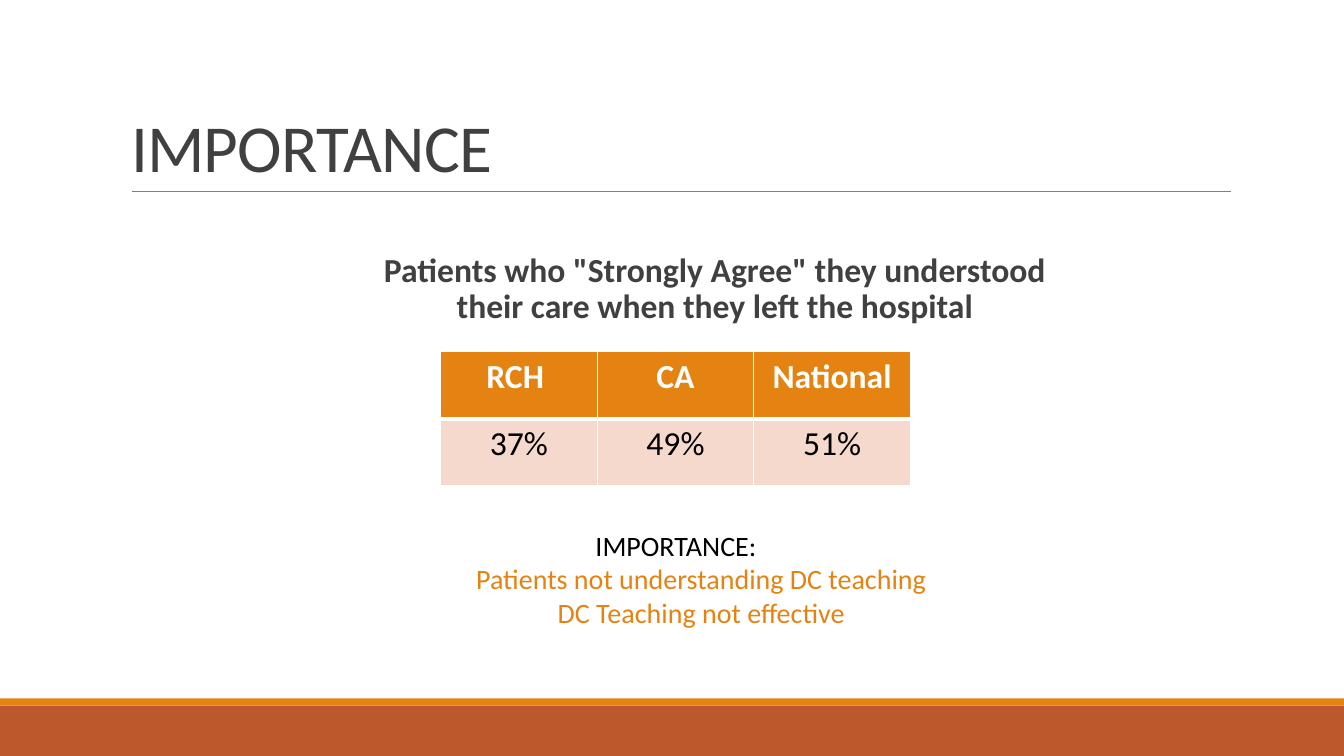
"""Build the slide on how well patients understood their care."""
from dataclasses import dataclass

from lxml import etree
from pptx import Presentation
from pptx.dml.color import RGBColor
from pptx.enum import shapes, text
from pptx.oxml import ns
from pptx.util import Inches, Pt

WHITE = RGBColor(0xFF, 0xFF, 0xFF)
BLACK = RGBColor(0, 0, 0)
DARK = RGBColor(0x40, 0x40, 0x40)
GRAY = RGBColor(0x80, 0x80, 0x80)
AMBER = RGBColor(0xE4, 0x83, 0x12)
RUST = RGBColor(0xBD, 0x58, 0x2C)
BLUSH = RGBColor(0xF5, 0xD9, 0xCC)
FONT = "Calibri"


@dataclass
class Band:
    top: float
    height: float
    fill: RGBColor


@dataclass
class Row:
    words: tuple[str, ...]
    fill: RGBColor
    ink: RGBColor
    bold: bool
    rules: dict[str, float]


@dataclass
class Note:
    words: str
    ink: RGBColor
    level: int
    indent: float


BANDS = [Band(7, 0.5, RUST), Band(6.93, 0.07, AMBER)]
ROWS = [
    Row(("RCH ", "CA", "National"), AMBER, WHITE, True,
        {"lnL": 1, "lnR": 1, "lnT": 1, "lnB": 3}),
    Row(("37%", "49%", "51%"), BLUSH, BLACK, False,
        {"lnL": 1, "lnR": 1, "lnT": 3, "lnB": 1}),
]
NOTES = [
    Note("IMPORTANCE:", BLACK, 0, 0),
    Note("Patients not understanding DC teaching", AMBER, 1, 0.5),
    Note("DC Teaching not effective", AMBER, 1, 0.5),
]


def add_run(para, words: str, size: float, ink: RGBColor, bold: bool = False):
    run = para.add_run()
    run.text = words
    run.font.name = FONT
    run.font.size = Pt(size)
    run.font.bold = bold
    run.font.color.rgb = ink
    return run


def place(shape, left: float, top: float, width: float, height: float) -> None:
    shape.left, shape.top = Inches(left), Inches(top)
    shape.width, shape.height = Inches(width), Inches(height)


def set_indent(para, left: float) -> None:
    props = para._p.get_or_add_pPr()
    props.set("marL", str(Inches(left)))
    props.set("indent", "0")


def draw_band(slide, band: Band) -> None:
    shape = slide.shapes.add_shape(
        shapes.MSO_SHAPE.RECTANGLE, 0, Inches(band.top),
        Inches(13.33), Inches(band.height))
    shape.shadow.inherit = False
    shape.fill.solid()
    shape.fill.fore_color.rgb = band.fill
    shape.line.fill.background()


def draw_rule(slide) -> None:
    rule = slide.shapes.add_connector(
        shapes.MSO_CONNECTOR.STRAIGHT,
        Inches(1.31), Inches(1.9), Inches(12.21), Inches(1.9))
    rule.line.color.rgb = GRAY
    rule.line.width = Pt(0.5)
    etree.SubElement(rule._element.spPr, ns.qn("a:effectLst"))


def fill_title(slide) -> None:
    title = slide.shapes.title
    place(title, 1.2, 0.31, 11, 1.59)
    frame = title.text_frame
    frame.auto_size = text.MSO_AUTO_SIZE.NONE
    frame.vertical_anchor = text.MSO_ANCHOR.BOTTOM
    para = frame.paragraphs[0]
    para.alignment = text.PP_ALIGN.LEFT
    para.line_spacing = 0.85
    run = add_run(para, "IMPORTANCE", 48, DARK)
    run.font._element.set("spc", "-50")


def fill_body(slide) -> None:
    body = slide.placeholders[1]
    place(body, 3.37, 1.9, 7.34, 1.86)
    frame = body.text_frame
    frame.auto_size = text.MSO_AUTO_SIZE.NONE
    frame.vertical_anchor = text.MSO_ANCHOR.TOP
    frame.margin_left = frame.margin_right = 0
    frame.margin_top = Inches(0.61)
    para = frame.paragraphs[0]
    para.alignment = text.PP_ALIGN.CENTER
    para.line_spacing = 0.9
    para.space_before = Pt(0)
    para.space_after = Pt(2)
    set_indent(para, 0.1)
    etree.SubElement(para._p.get_or_add_pPr(), ns.qn("a:buNone"))
    add_run(para, 'Patients who "Strongly Agree" they understood '
            "their care when they left the hospital", 24, DARK, True)


def set_rules(cell, rules: dict[str, float]) -> None:
    props = cell._tc.get_or_add_tcPr()
    for spot, (side, width) in enumerate(rules.items()):
        line = etree.Element(ns.qn(f"a:{side}"), w=str(Pt(width)))
        fill = etree.SubElement(line, ns.qn("a:solidFill"))
        etree.SubElement(fill, ns.qn("a:srgbClr"), val=str(WHITE))
        props.insert(spot, line)


def draw_table(slide) -> None:
    table = slide.shapes.add_table(
        len(ROWS), len(ROWS[0].words), Inches(4.37), Inches(3.49),
        Inches(4.66), Inches(1.33)).table
    for y, row in enumerate(ROWS):
        for x, words in enumerate(row.words):
            cell = table.cell(y, x)
            cell.fill.solid()
            cell.fill.fore_color.rgb = row.fill
            set_rules(cell, row.rules)
            para = cell.text_frame.paragraphs[0]
            para.alignment = text.PP_ALIGN.CENTER
            add_run(para, words, 24, row.ink, row.bold)


def draw_notes(slide) -> None:
    box = slide.shapes.add_textbox(
        Inches(3.37), Inches(5.19), Inches(6.67), Inches(1.11))
    frame = box.text_frame
    frame.word_wrap = True
    frame.auto_size = text.MSO_AUTO_SIZE.SHAPE_TO_FIT_TEXT
    for spot, note in enumerate(NOTES):
        para = frame.add_paragraph() if spot else frame.paragraphs[0]
        para.alignment = text.PP_ALIGN.CENTER
        para.level = note.level
        set_indent(para, note.indent)
        add_run(para, note.words, 20, note.ink)


def main() -> None:
    deck = Presentation()
    deck.slide_width, deck.slide_height = Inches(13.33), Inches(7.5)
    slide = deck.slides.add_slide(deck.slide_layouts[1])
    for band in BANDS:
        draw_band(slide, band)
    draw_rule(slide)
    fill_title(slide)
    fill_body(slide)
    draw_table(slide)
    draw_notes(slide)
    deck.save("out.pptx")


if __name__ == "__main__":
    main()
